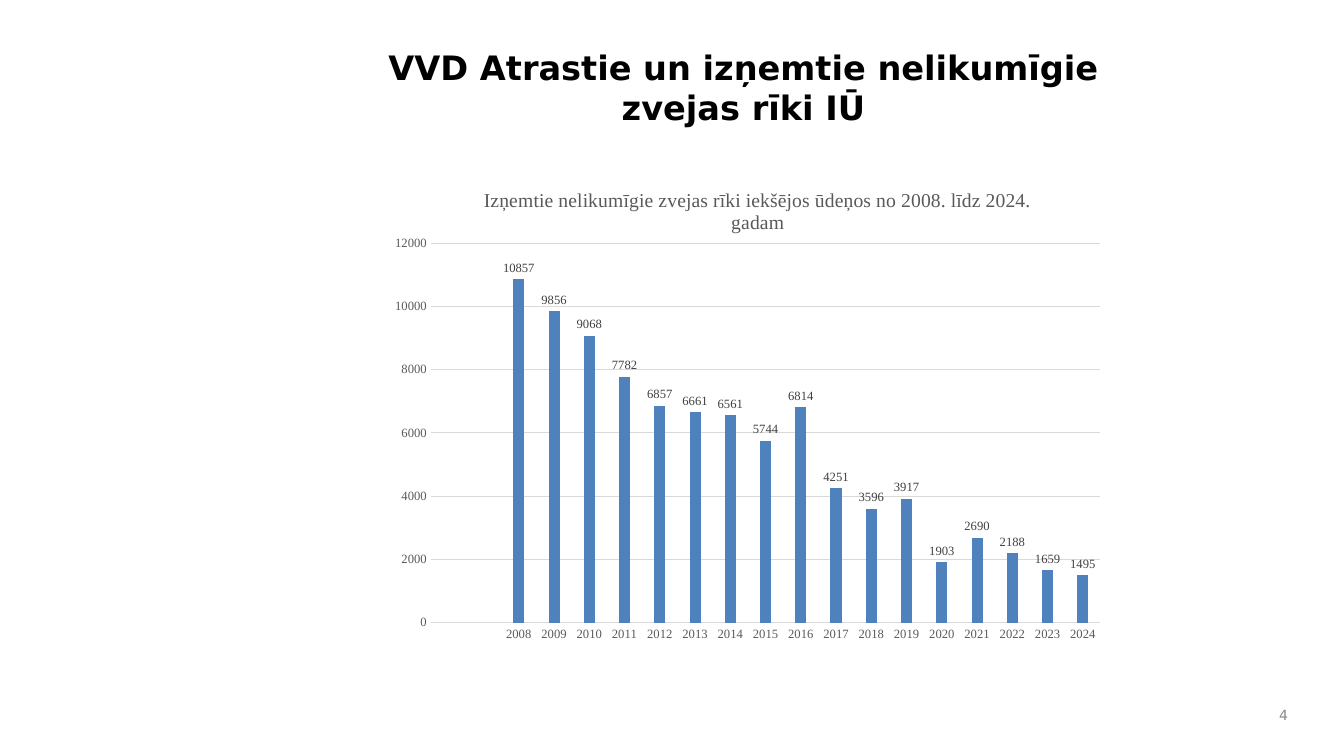
from dataclasses import dataclass

from lxml.etree import SubElement
from pptx import Presentation
from pptx.chart.chart import Chart
from pptx.chart.data import CategoryChartData
from pptx.dml.color import RGBColor
from pptx.enum.chart import XL_CHART_TYPE, XL_LABEL_POSITION, XL_TICK_MARK
from pptx.enum.text import MSO_ANCHOR, PP_ALIGN
from pptx.oxml.ns import qn
from pptx.slide import Slide
from pptx.text.text import Font
from pptx.util import Emu, Pt

PX_PER_INCH = 100.8
HEADING_FONT = "DejaVu Sans"
CHART_FONT = "Times New Roman"
BLACK, DARK_GRAY, MID_GRAY = "000000", "404040", "595959"
NUMBER_GRAY, GRID_GRAY, BAR_BLUE = "898989", "D9D9D9", "4F81BD"

FIRST_YEAR = 2008
GEAR_REMOVED = [10857, 9856, 9068, 7782, 6857, 6661, 6561, 5744, 6814,
                4251, 3596, 3917, 1903, 2690, 2188, 1659, 1495]
LEADING_BLANKS = 2


@dataclass(frozen=True)
class Box:
    left: int
    top: int
    width: int
    height: int

    def emu(self) -> list[Emu]:
        return [px(n) for n in (self.left, self.top, self.width, self.height)]


def px(length: int) -> Emu:
    return Emu(round(length * 914400 / PX_PER_INCH))


def rgb(value: str) -> RGBColor:
    return RGBColor.from_string(value)


def style_font(font: Font, name: str, size: int, color: str, bold: bool = False) -> None:
    font.name = name
    font.size = Pt(size)
    font.bold = bold
    font.color.rgb = rgb(color)


def add_text(slide: Slide, box: Box, text: str, *, size: int, color: str,
             align: PP_ALIGN, anchor: MSO_ANCHOR = MSO_ANCHOR.TOP,
             bold: bool = False) -> None:
    frame = slide.shapes.add_textbox(*box.emu()).text_frame
    frame.word_wrap = True
    frame.vertical_anchor = anchor
    paragraph = frame.paragraphs[0]
    paragraph.alignment = align
    run = paragraph.add_run()
    run.text = text
    style_font(run.font, HEADING_FONT, size, color, bold)


def set_layout(chart: Chart, tag: str, index: int, **settings: str | float) -> None:
    """Give a chart part a manual layout, placed at the schema's child index."""
    parent = chart.element.find(".//" + qn(tag))
    for old in parent.findall(qn("c:layout")):
        parent.remove(old)
    layout = SubElement(parent, qn("c:layout"))
    parent.insert(index, layout)
    manual = SubElement(layout, qn("c:manualLayout"))
    for name, value in settings.items():
        SubElement(manual, qn(f"c:{name}")).set("val", str(value))


def add_gear_chart(slide: Slide, box: Box, title: str) -> None:
    data = CategoryChartData()
    years = [str(FIRST_YEAR + i) for i in range(len(GEAR_REMOVED))]
    data.categories = [""] * LEADING_BLANKS + years
    data.add_series("Series 1", [None] * LEADING_BLANKS + GEAR_REMOVED)
    chart = slide.shapes.add_chart(
        XL_CHART_TYPE.COLUMN_CLUSTERED, *box.emu(), data).chart
    style_font(chart.font, CHART_FONT, 10, BLACK)
    chart.has_legend = False

    paragraph = chart.chart_title.text_frame.paragraphs[0]
    run = paragraph.add_run()
    run.text = title
    style_font(run.font, CHART_FONT, 14, MID_GRAY)
    set_layout(chart, "c:title", 1, xMode="edge", yMode="edge", x=0.13, y=0.04)
    set_layout(chart, "c:plotArea", 0, layoutTarget="inner", xMode="edge",
               yMode="edge", x=0.063, y=0.157, w=0.904, h=0.741)

    for axis in (chart.category_axis, chart.value_axis):
        axis.major_tick_mark = axis.minor_tick_mark = XL_TICK_MARK.NONE
        style_font(axis.tick_labels.font, CHART_FONT, 9, MID_GRAY)
    values = chart.value_axis
    values.minimum_scale, values.maximum_scale, values.major_unit = 0, 12000, 2000
    values.format.line.fill.background()
    for line in (chart.category_axis.format.line, values.major_gridlines.format.line):
        line.color.rgb = rgb(GRID_GRAY)
        line.width = Pt(0.75)

    plot = chart.plots[0]
    plot.gap_width = 219
    plot.overlap = -27
    plot.vary_by_categories = False
    series = plot.series[0]
    series.format.fill.solid()
    series.format.fill.fore_color.rgb = rgb(BAR_BLUE)
    labels = series.data_labels
    labels.show_value = True
    labels.position = XL_LABEL_POSITION.OUTSIDE_END
    style_font(labels.font, CHART_FONT, 9, DARK_GRAY)


def main() -> None:
    presentation = Presentation()
    presentation.slide_width, presentation.slide_height = px(1344), px(756)
    slide = presentation.slides.add_slide(presentation.slide_layouts[6])
    add_text(slide, Box(361, 42, 765, 121),
             "VVD Atrastie un izņemtie nelikumīgie zvejas rīki IŪ",
             size=24, color=BLACK, align=PP_ALIGN.CENTER, bold=True)
    add_text(slide, Box(1254, 698, 44, 33), "4", size=10, color=NUMBER_GRAY,
             align=PP_ALIGN.RIGHT, anchor=MSO_ANCHOR.MIDDLE)
    add_gear_chart(
        slide, Box(384, 163, 741, 512),
        "Izņemtie nelikumīgie zvejas rīki iekšējos ūdeņos no 2008. līdz 2024. gadam")
    presentation.save("out.pptx")


if __name__ == "__main__":
    main()
